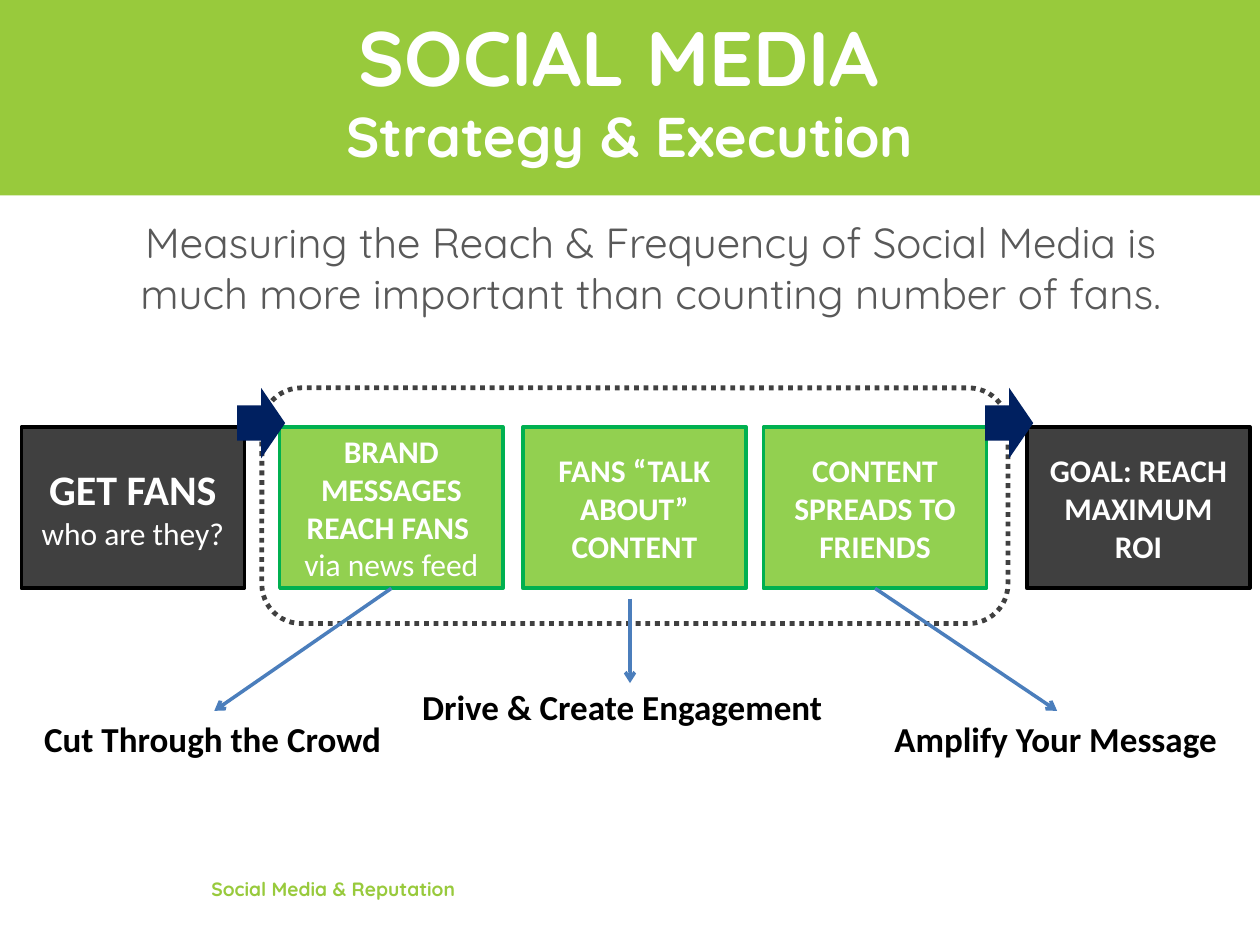
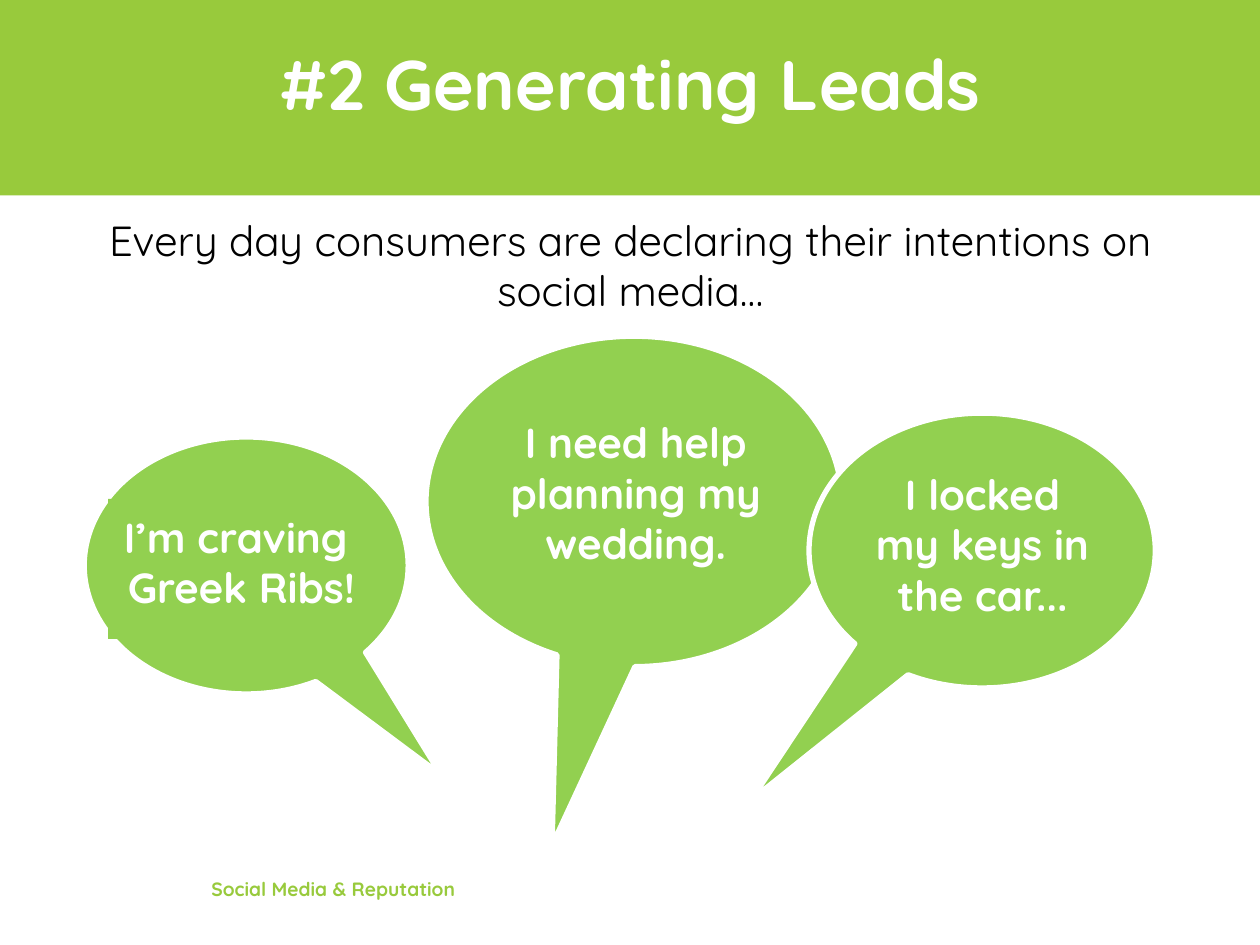
import pptx
import pptx.dml.color
import pptx.enum.dml
import pptx.enum.shapes
import pptx.enum.text
import pptx.oxml
import pptx.oxml.ns
import pptx.util

Cm = pptx.util.Cm
Pt = pptx.util.Pt
RGBColor = pptx.dml.color.RGBColor
Shape = pptx.enum.shapes.MSO_SHAPE
Anchor = pptx.enum.text.MSO_ANCHOR
Align = pptx.enum.text.PP_ALIGN

WHITE = RGBColor(0xFF, 0xFF, 0xFF)
BLACK = RGBColor(0x00, 0x00, 0x00)
BRAND_GREEN = RGBColor(0x98, 0xCA, 0x3C)
LIGHT_GREEN = RGBColor(0x92, 0xD0, 0x50)
DARK_GREEN = RGBColor(0x00, 0xB0, 0x50)
CHARCOAL = RGBColor(0x40, 0x40, 0x40)
GREY = RGBColor(0x59, 0x59, 0x59)
NAVY = RGBColor(0x00, 0x20, 0x60)
BLUE = RGBColor(0x4B, 0x7E, 0xBC)

TITLE = {"name": "Quicksand", "size": Pt(40), "bold": True, "color": WHITE}
LEAD = {"name": "Quicksand", "size": Pt(24), "bold": False, "color": BLACK}
FOOTER = {"name": "Quicksand", "size": Pt(11), "bold": True, "color": BRAND_GREEN}
QUOTE = TITLE | {"size": Pt(24)}
STEP = {"name": "Calibri", "size": Pt(18), "bold": True, "color": WHITE}
LABEL = STEP | {"size": Pt(20), "color": BLACK}


def add_shape(slide, kind, box, fill=None, line=None, width=2):
    """Add a preset shape; box is left, top, width, height in centimetres."""
    shape = slide.shapes.add_shape(kind, *(Cm(length) for length in box))
    shape.shadow.inherit = False
    if fill is None:
        shape.fill.background()
    else:
        shape.fill.solid()
        shape.fill.fore_color.rgb = fill
    if line is None:
        shape.line.fill.background()
    else:
        shape.line.color.rgb = line
        shape.line.width = Pt(width)
    return shape


def write(shape, lines, anchor=Anchor.MIDDLE, align=Align.CENTER, wrap=True):
    """Write one paragraph for each (text, format) pair."""
    frame = shape.text_frame
    frame.word_wrap = wrap
    frame.vertical_anchor = anchor
    for index, (text, style) in enumerate(lines):
        paragraph = frame.add_paragraph() if index else frame.paragraphs[0]
        paragraph.alignment = align
        run = paragraph.add_run()
        run.text = text
        for attribute, value in style.items():
            if attribute == "color":
                run.font.color.rgb = value
            else:
                setattr(run.font, attribute, value)


presentation = pptx.Presentation()
presentation.slide_width = Cm(25.4)
presentation.slide_height = Cm(19.05)

# Band, title, lead sentence and footer of both slides
pages = [
    ((0, -0.43, 25.4, 4.45),
     [("SOCIAL MEDIA ", TITLE | {"size": Pt(44)}),
      ("Strategy & Execution", TITLE | {"size": Pt(32)})],
     (1.9, 4.25, 22.43, 2.5),
     ("Measuring the Reach & Frequency of Social Media is much more "
      "important than counting number of fans.", LEAD | {"color": GREY})),
    ((1.27, 0.56, 22.86, 2.21),
     [("#2 Generating Leads", TITLE)],
     (0.74, 4.19, 23.93, 2.5),
     ("Every day consumers are declaring their intentions on social media…", LEAD)),
]
slides = []
for title_box, title_lines, lead_box, lead in pages:
    slide = presentation.slides.add_slide(presentation.slide_layouts[6])
    slides.append(slide)
    add_shape(slide, Shape.RECTANGLE, (0, 0, 25.4, 3.94), BRAND_GREEN)
    for box, lines, anchor, align in [
        (title_box, title_lines, Anchor.MIDDLE, Align.CENTER),
        (lead_box, [lead], Anchor.TOP, Align.CENTER),
        ((4.01, 16.84, 15.04, 2.16), [("Social Media & Reputation", FOOTER)],
         Anchor.MIDDLE, Align.LEFT),
    ]:
        text_box = slide.shapes.add_textbox(*(Cm(length) for length in box))
        write(text_box, lines, anchor, align)

strategy, leads = slides

# Slide 1: five steps from fans to return
steps = []
for left, fill, line, lines in [
    (0.43, CHARCOAL, BLACK, [("GET FANS", STEP | {"size": Pt(24)}),
                             ("who are they?", STEP | {"bold": False})]),
    (5.64, LIGHT_GREEN, DARK_GREEN, [("BRAND MESSAGES REACH FANS ", STEP),
                                     ("via news feed", STEP | {"bold": False})]),
    (10.54, LIGHT_GREEN, DARK_GREEN, [("FANS “TALK ABOUT” CONTENT", STEP)]),
    (15.39, LIGHT_GREEN, DARK_GREEN, [("CONTENT SPREADS TO FRIENDS", STEP)]),
    (20.7, CHARCOAL, BLACK, [("GOAL: REACH MAXIMUM ROI", STEP)]),
]:
    step = add_shape(strategy, Shape.RECTANGLE, (left, 8.61, 4.5, 3.25), fill, line)
    write(step, lines)
    steps.append(step)

frame_outline = add_shape(strategy, Shape.ROUNDED_RECTANGLE,
                          (5.28, 7.82, 15.04, 4.75), None, CHARCOAL, 2.75)
frame_outline.line.dash_style = pptx.enum.dml.MSO_LINE.ROUND_DOT
for left in (4.78, 19.86):
    add_shape(strategy, Shape.RIGHT_ARROW, (left, 7.82, 0.97, 1.42), NAVY)

for text, left, top, width in [
    ("Cut Through the Crowd", 0.64, 14.33, 7.37),
    ("Drive & Create Engagement", 8.26, 13.69, 8.66),
    ("Amplify Your Message", 17.78, 14.33, 7.06),
]:
    label = strategy.shapes.add_textbox(Cm(left), Cm(top), Cm(width), Cm(1.12))
    write(label, [(text, LABEL)], Anchor.TOP, Align.LEFT, wrap=False)

for start, end, source_step in [
    ((7.89, 11.86), (4.32, 14.33), steps[1]),
    ((12.7, 12.07), (12.7, 13.77), None),
    ((17.64, 11.86), (21.31, 14.33), steps[3]),
]:
    arrow = strategy.shapes.add_connector(
        pptx.enum.shapes.MSO_CONNECTOR.STRAIGHT,
        *(Cm(length) for length in start + end))
    if source_step is not None:
        arrow.begin_connect(source_step, 2)
    arrow.line.color.rgb = BLUE
    arrow.line.width = Pt(2)
    head = pptx.oxml.parse_xml(
        '<a:tailEnd %s type="arrow"/>' % pptx.oxml.ns.nsdecls("a"))
    arrow.line._get_or_add_ln().append(head)
    arrow._element.spPr.append(pptx.oxml.parse_xml(
        "<a:effectLst %s/>" % pptx.oxml.ns.nsdecls("a")))

# Slide 2: speech bubbles, each with its tip point
for left, top, width, height, tip_x, tip_y in [
    (1.7, 8.81, 6.53, 5.18, 8.89, 15.62),
    (8.59, 6.78, 8.38, 6.66, 11.13, 17.04),
    (16.31, 8.33, 6.98, 5.54, 15.14, 16.13),
]:
    bubble = add_shape(leads, Shape.OVAL_CALLOUT, (left, top, width, height),
                       LIGHT_GREEN, WHITE, 3)
    bubble.adjustments[0] = (tip_x - left) / width - 0.5
    bubble.adjustments[1] = (tip_y - top) / height - 0.5

for box, fill, lines in [
    ((2.18, 10.06, 5.38, 2.82), LIGHT_GREEN, ["I’m craving ", "Greek Ribs!"]),
    ((9.88, 8.15, 5.87, 3.99), LIGHT_GREEN, ["I need help planning my wedding."]),
    ((16.87, 9.19, 5.87, 3.99), None, ["I locked", "my keys in the car..."]),
]:
    quote = add_shape(leads, Shape.RECTANGLE, box, fill)
    for side in ("left", "top", "right", "bottom"):
        setattr(quote.text_frame, "margin_" + side, Cm(0.25))
    write(quote, [(line, QUOTE) for line in lines], Anchor.TOP)

presentation.save("out.pptx")
